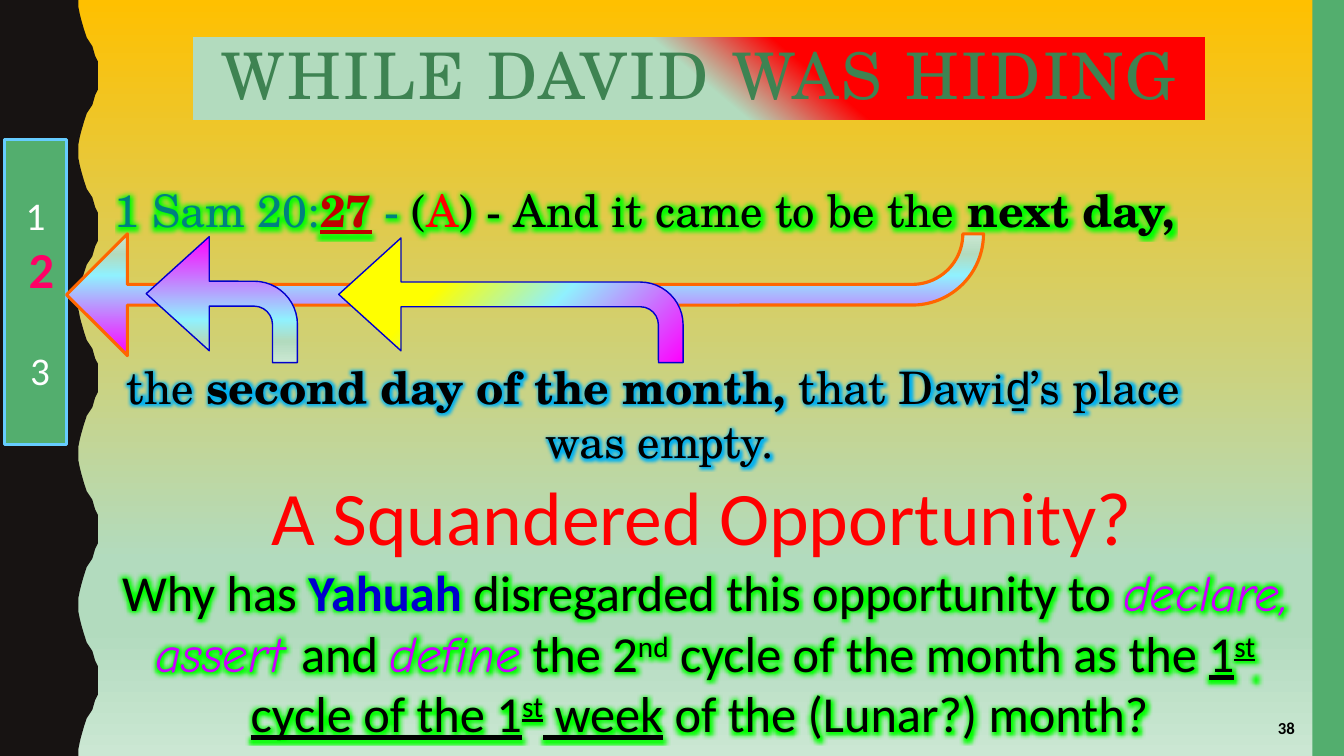
from lxml.etree import SubElement as Sub
from pptx import Presentation
from pptx.dml.color import RGBColor as RGB
from pptx.enum.shapes import MSO_SHAPE as Shape
from pptx.enum.text import MSO_ANCHOR as Anchor, PP_ALIGN as Align
from pptx.oxml.ns import qn
from pptx.util import Pt

BLACK, WHITE, RED = RGB(0, 0, 0), RGB(255, 255, 255), RGB(255, 0, 0)
DARK, GREEN, FOREST = RGB(0x17, 0x13, 0x12), RGB(0x53, 0xAE, 0x6E), RGB(0x3E, 0x83, 0x52)
MINT, PALE, GOLD = RGB(0xB2, 0xDB, 0xBE), RGB(0xCB, 0xE7, 0xD3), RGB(0xFF, 0xC0, 0)
TEAL, WINE, PINK = RGB(0, 0x80, 0x80), RGB(0xC0, 0, 0), RGB(0xFF, 0, 0x66)
NAVY, VIOLET, SKY = RGB(0, 0, 0xCC), RGB(0xCC, 0, 0xFF), RGB(0x66, 0xCC, 0xFF)
ORANGE, CYAN = RGB(0xFF, 0x66, 0), RGB(0x90, 0xF1, 0xFE)
MAGENTA, YELLOW = RGB(255, 0, 255), RGB(255, 255, 0)
LIME, AZURE = RGB(0, 255, 0), RGB(0, 0xB0, 0xF0)
SERIF, SANS, COMIC = "TeX Gyre Schola", "Calibri", "Comic Neue"
RAINBOW = [(0, MAGENTA), (66, CYAN), (83, MINT), (100, PALE)]
SUNNY = [(0, MAGENTA), (40, CYAN), (68, YELLOW)]
HOOK = (0.198, 0.453, 0.5, 0.344)


def blend(fill, root, stops, angle=None):
    """Fill with a linear gradient, or a round one when no angle is given."""
    fill.gradient()
    grad = next(root.iter(qn("a:gradFill")))
    for child in list(grad):
        grad.remove(child)
    grad.set("rotWithShape", "1")
    row = Sub(grad, qn("a:gsLst"))
    for place, color in stops:
        stop = Sub(row, qn("a:gs"), pos=str(place * 1000))
        Sub(stop, qn("a:srgbClr"), val=str(color))
    if angle is None:
        ring = Sub(grad, qn("a:path"), path="circle")
        Sub(ring, qn("a:fillToRect"), l="100000", t="100000")
    else:
        Sub(grad, qn("a:lin"), ang=str(angle * 60000), scaled="0")


def edge(shape, color=None, width=0):
    """Drop the shadow and set the outline."""
    shape.shadow.inherit = False
    if color is None:
        shape.line.fill.background()
    else:
        shape.line.color.rgb = color
        shape.line.width = Pt(width)


def block(slide, box, color):
    """Place a plain rectangle."""
    shape = slide.shapes.add_shape(Shape.RECTANGLE, *map(Pt, box))
    shape.fill.solid()
    shape.fill.fore_color.rgb = color
    edge(shape)
    return shape


def add_run(para, text, size, color=BLACK, face=SANS, marks="", glow=None):
    """Add one run; marks hold b, i, u and ^ for raised text."""
    run = para.add_run()
    run.text = text
    font = run.font
    font.size, font.name = Pt(size), face
    font.color.rgb = color
    font.bold, font.italic, font.underline = ("b" in marks, "i" in marks, "u" in marks)
    props = font._element
    if "^" in marks:
        props.set("baseline", "30000")
    if glow is not None:
        fx = Sub(props, qn("a:effectLst"))
        props.find(qn("a:solidFill")).addnext(fx)
        halo = Sub(fx, qn("a:glow"), rad=str(Pt(8)))
        Sub(halo, qn("a:srgbClr"), val=str(glow))
    return run


def label(slide, box, lines, size, face=SANS, align=Align.CENTER,
          anchor=Anchor.MIDDLE, glow=None):
    """Place wrapped text, given as lines of (text, color, marks, face)."""
    frame = slide.shapes.add_textbox(*map(Pt, box)).text_frame
    frame.word_wrap, frame.vertical_anchor = True, anchor
    para = frame.paragraphs[0]
    para.alignment = align
    for k, line in enumerate(lines):
        if k:
            para.add_line_break()
        for text, color, marks, *other in line:
            add_run(para, text, size, color, other[0] if other else face, marks, glow)
    return para


def wave(slide, box):
    """Draw the dark left border with its rippled edge."""
    left, top, width, height = box
    ripple = [(56, 0), (56, 5), (57, 10), (57.5, 14.5), (60, 21), (62.5, 27),
              (65.5, 33), (68.5, 39.5), (69.5, 44), (70, 49), (70, 54)]
    step = height / 5
    full = ripple + [(x, 108 - y) for x, y in ripple[-2::-1]]
    edge_pts = [(left + x, top + n * step + y * step / 108)
                for n in range(5) for x, y in full]
    pen = slide.shapes.build_freeform(left, top, scale=Pt(1))
    pen.add_line_segments(edge_pts + [(left, top + height)])
    shape = pen.convert_to_shape()
    shape.fill.solid()
    shape.fill.fore_color.rgb = DARK
    edge(shape)


def title(slide, box):
    """Draw the two-tone heading bar."""
    shape = block(slide, box, MINT)
    blend(shape.fill, shape.element.spPr, [(39, RED), (50, MINT)], 130)
    frame = shape.text_frame
    frame.word_wrap, frame.vertical_anchor = True, Anchor.MIDDLE
    para = frame.paragraphs[0]
    para.alignment, para.line_spacing = Align.CENTER, 0.9
    run = add_run(para, "WHILE DAVID WAS HIDING", 45.9, FOREST, SERIF)
    run.font._element.set("spc", "200")


def tally(slide, box):
    """Draw the side panel of numbers."""
    shape = block(slide, box, GREEN)
    edge(shape, SKY, 2.25)
    frame = shape.text_frame
    frame.word_wrap, frame.vertical_anchor = True, Anchor.MIDDLE
    rows = [("1", 28, WHITE, "", 0), (" 2", 36, PINK, "b", 0), (" 3", 28, WHITE, "", 34)]
    for k, (text, size, color, marks, gap) in enumerate(rows):
        para = frame.add_paragraph() if k else frame.paragraphs[0]
        para.alignment, para.space_before = Align.CENTER, Pt(gap)
        add_run(para, text, size, color, marks=marks)


def arrow(slide, box, stops, angle, line, width, bends, turn=0):
    """Draw a bent arrow pointing left, by a half turn or a mirror."""
    shape = slide.shapes.add_shape(Shape.BENT_ARROW, *map(Pt, box))
    for k, bend in enumerate(bends):
        shape.adjustments[k] = bend
    blend(shape.fill, shape.element.spPr, stops, angle)
    edge(shape, line, width)
    shape.rotation = turn
    if not turn:
        shape.element.spPr.find(qn("a:xfrm")).set("flipH", "1")


def verse(slide, box):
    """Set the verse around its three arrows."""
    x, y, w, h = box
    head = label(slide, (x, y, w, 60), [[
        ("1 Sam 20:", TEAL, ""), ("27", WINE, "bu"), (" -", TEAL, ""),
        (" (", BLACK, ""), ("A", RED, ""), (") - And it came to be the ", BLACK, ""),
        ("next day,", BLACK, "b")]], 32, SERIF, Align.LEFT, Anchor.TOP, LIME)
    head.line_spacing = 1.1
    arrow(slide, (x - 27.5, y + 44, 655, 87), RAINBOW, 90, ORANGE, 2.25,
          (0.17, 0.5, 0.5, 0.585), 180)
    label(slide, (x, y + 125.5, w - 57.5, 93.5), [
        [("the ", BLACK, ""), ("second day of the month, ", BLACK, "b"),
         ("that Dawi", BLACK, ""), ("ḏ", BLACK, "", "Arial"), ("’s place ", BLACK, "")],
        [("was empty.", BLACK, "")]], 32, SERIF, glow=AZURE)
    arrow(slide, (x + 29.5, y + 46, 108, 90), RAINBOW, 90, NAVY, 1, HOOK)
    arrow(slide, (x + 167, y + 47, 246, 89), SUNNY, None, NAVY, 1, HOOK)


def query(slide, box):
    """Set the red question and the text under it."""
    x, y, w, h = box
    label(slide, (x + 29.5, y, 793.5, 57.5), [[("A Squandered Opportunity?", RED, "")]], 54)
    label(slide, (x, y + 57.5, w, h - 57.5), [[
        ("Why has ", BLACK, ""), ("Yahuah ", NAVY, "b"),
        ("disregarded this opportunity to ", BLACK, ""),
        ("declare, assert ", VIOLET, "i", COMIC), ("and ", BLACK, ""),
        ("define", VIOLET, "i", COMIC), (" the 2", BLACK, ""), ("nd", BLACK, "^"),
        (" cycle of the month as the ", BLACK, ""), ("1", BLACK, "u"),
        ("st", BLACK, "u^"), (" cycle of the 1", BLACK, "u"), ("st", BLACK, "u^"),
        (" week", BLACK, "u"), (" of the (Lunar?) month? ", BLACK, "")]], 36, glow=LIME)


def main():
    """Build and save the slide."""
    deck = Presentation()
    deck.slide_width, deck.slide_height = Pt(960), Pt(540)
    slide = deck.slides.add_slide(deck.slide_layouts[6])
    blend(slide.background.fill, slide.element,
          [(0, GOLD), (74, MINT), (83, MINT), (100, PALE)], 90)
    wave(slide, (0, 0, 70, 540))
    block(slide, (937.5, 0, 22.5, 540), GREEN)
    title(slide, (138, 26.5, 723, 59))
    tally(slide, (3.5, 99.5, 44, 218))
    verse(slide, (75, 123, 850, 219))
    query(slide, (75, 339, 857.5, 196))
    label(slide, (710, 506, 222, 27.5), [[("38", BLACK, "b")]], 12, align=Align.RIGHT)
    deck.save("out.pptx")


if __name__ == "__main__":
    main()
